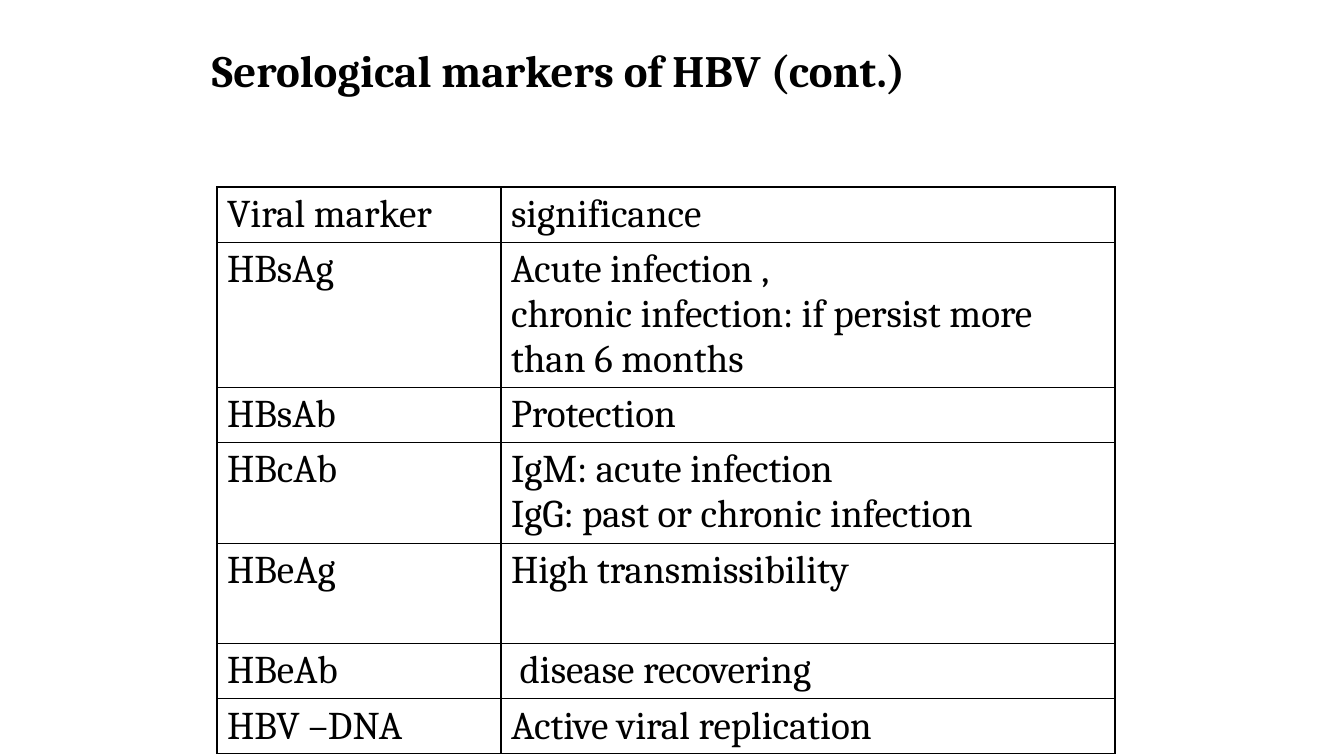
from lxml import etree
from pptx import Presentation
from pptx.dml.color import RGBColor
from pptx.enum.text import MSO_ANCHOR
from pptx.oxml.ns import qn
from pptx.util import Pt

TOP = MSO_ANCHOR.TOP
BLACK = RGBColor(0x00, 0x00, 0x00)
EMU_PER_PX = 914400 / 100.8
EMU_PER_PT = 12700

MARKERS = [
    ("Viral marker", ["significance"]),
    ("HBsAg", ["Acute infection ,",
               "chronic infection: if persist more than 6 months"]),
    ("HBsAb", ["Protection"]),
    ("HBcAb", ["IgM: acute infection", "IgG: past or chronic infection"]),
    ("HBeAg", ["High transmissibility"]),
    ("HBeAb", [" disease recovering"]),
    ("HBV –DNA", ["Active viral replication"]),
]
COLUMN_WIDTHS = [284, 614]
ROW_HEIGHTS = [55, 145, 55, 101, 100, 55, 55]


def px(n):
    return round(n * EMU_PER_PX)


def write(tf, lines, size=28, bold=False, color=BLACK, font="Cambria"):
    for i, line in enumerate(lines):
        p = tf.paragraphs[0] if i == 0 else tf.add_paragraph()
        r = p.add_run()
        r.text = line
        r.font.name = font
        r.font.size = Pt(size)
        r.font.bold = bold
        r.font.color.rgb = color


class SlideBuilder:
    """Adds styled text and tables to one slide."""

    def __init__(self, slide, line_color=BLACK, line_width=1):
        self.s = slide
        self.line_color = line_color
        self.line_width = line_width

    def text(self, x, y, w, h, lines, **style):
        sp = self.s.shapes.add_textbox(px(x), px(y), px(w), px(h))
        tf = sp.text_frame
        tf.word_wrap = True
        tf.vertical_anchor = TOP
        write(tf, lines, **style)

    def border(self, cell):
        tc_pr = cell._tc.get_or_add_tcPr()
        for i, side in enumerate(("lnL", "lnR", "lnT", "lnB")):
            ln = etree.Element(qn(f"a:{side}"), w=str(self.line_width * EMU_PER_PT))
            fill = etree.SubElement(ln, qn("a:solidFill"))
            etree.SubElement(fill, qn("a:srgbClr"), val=str(self.line_color))
            tc_pr.insert(i, ln)

    def table(self, x, y, widths, heights, rows, **style):
        sp = self.s.shapes.add_table(len(heights), len(widths), px(x), px(y),
                                     px(sum(widths)), px(sum(heights)))
        table = sp.table
        table.first_row = False
        table.horz_banding = False
        for column, width in zip(table.columns, widths):
            column.width = px(width)
        for row, height, content in zip(table.rows, heights, rows):
            row.height = px(height)
            for cell, lines in zip(row.cells, content):
                cell.fill.background()
                self.border(cell)
                write(cell.text_frame, lines, **style)


def main():
    prs = Presentation()
    prs.slide_width, prs.slide_height = px(1344), px(756)
    s = SlideBuilder(prs.slides.add_slide(prs.slide_layouts[6]))
    s.table(217, 187, COLUMN_WIDTHS, ROW_HEIGHTS,
            [([marker], significance) for marker, significance in MARKERS])
    s.text(202, 38, 887, 95, ["Serological markers of HBV (cont.)"],
           size=32, bold=True)
    prs.save("out.pptx")


if __name__ == "__main__":
    main()
